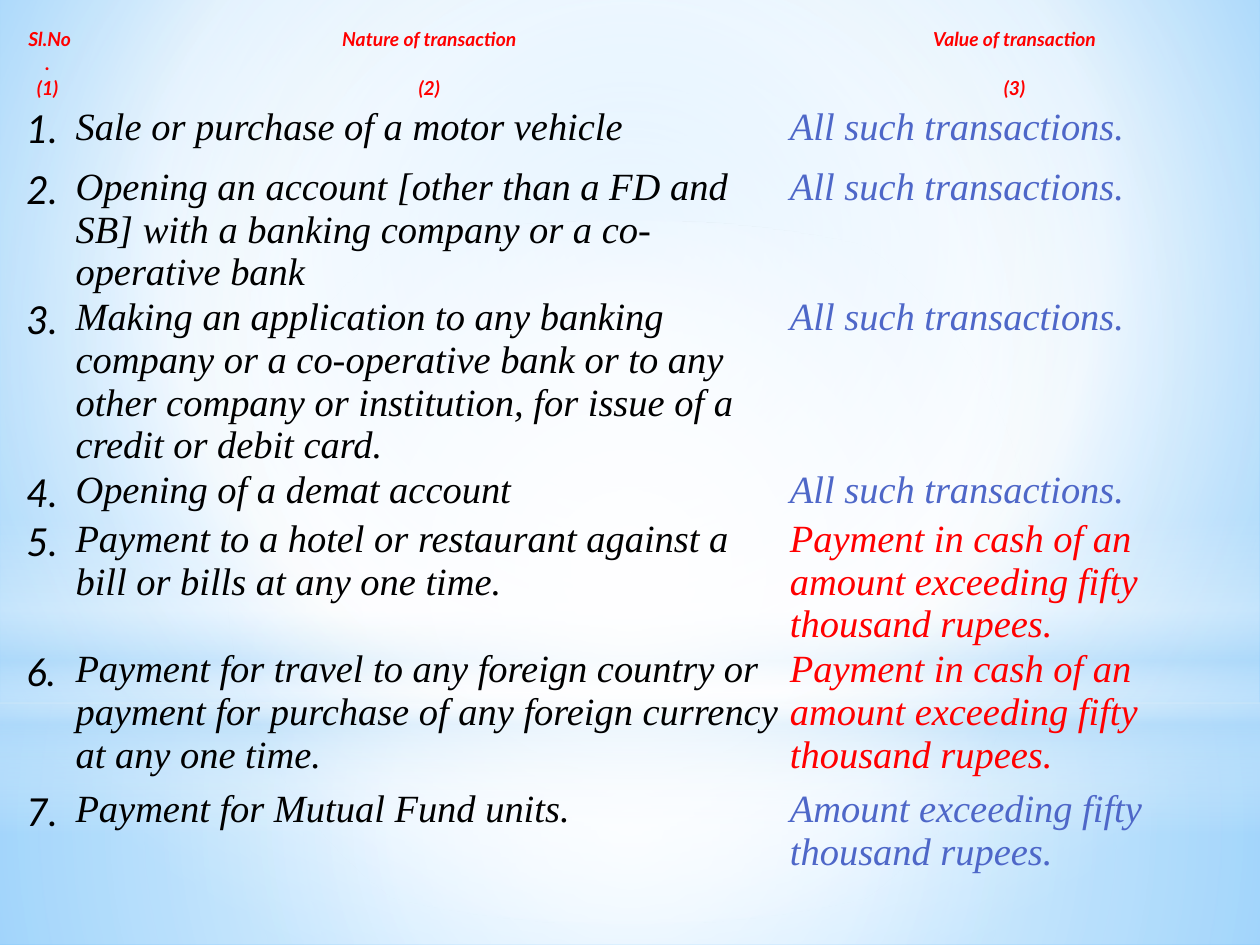
from lxml import etree
from pptx import Presentation
from pptx.dml.color import RGBColor
from pptx.enum.shapes import MSO_SHAPE
from pptx.enum.text import PP_ALIGN
from pptx.oxml.ns import qn
from pptx.util import Inches, Pt

RECTANGLE = MSO_SHAPE.RECTANGLE
OVAL = MSO_SHAPE.OVAL
LEFT = PP_ALIGN.LEFT
CENTER = PP_ALIGN.CENTER
JUSTIFY = PP_ALIGN.JUSTIFY

COLORS = {
    "white": "FFFFFF",
    "pale": "B4DCFA",
    "sky": "9ED5FF",
    "deep": "5BB9FF",
    "black": "000000",
    "red": "FF0000",
    "blue": "4E67C8",
}
LABEL_FONT = "Lato"
BODY_FONT = "Times New Roman"
PLAIN_TABLE_STYLE = "{2D5ABB26-0587-4C30-8999-92F81FD0307C}"
CENTERED = (50, 50, 50, 50)

COLUMN_WIDTHS = (0.39, 5.67, 3.62)
ROW_HEIGHTS = (0.24, 0.23, 0.48, 0.97, 1.27, 0.35, 0.82, 1.11, 0.86)
HEADINGS = (
    ("Sl.No. ", "Nature of transaction ", "Value of transaction "),
    ("(1) ", "(2) ", "(3) "),
)
ALL = ("All such transactions.", "blue")
CASH = ("Payment in cash of an amount exceeding fifty thousand rupees.", "red")
TRANSACTIONS = (
    ("Sale or purchase of a motor vehicle", ALL),
    ("Opening an account [other than a FD and SB] with a banking company "
     "or a co-operative bank", ALL),
    ("Making an application to any banking company or a co-operative bank or to "
     "any other company or institution, for issue of a credit or debit card.", ALL),
    ("Opening of a demat account", ALL),
    ("Payment to a hotel or restaurant against a bill or bills at any one time.",
     CASH),
    ("Payment for travel to any foreign country or payment for purchase of any "
     "foreign currency at any one time.", CASH),
    ("Payment for Mutual Fund units.",
     ("Amount exceeding fifty thousand rupees.", "blue")),
)


def set_gradient(fill, owner, stops, focus=None, angle=0):
    fill.gradient()
    gradient = owner.find(".//" + qn("a:gradFill"))
    for child in list(gradient):
        gradient.remove(child)
    stop_list = etree.SubElement(gradient, qn("a:gsLst"))
    for position, color, opacity in stops:
        stop = etree.SubElement(stop_list, qn("a:gs"), pos=str(position * 1000))
        tint = etree.SubElement(stop, qn("a:srgbClr"), val=COLORS[color])
        if opacity < 100:
            etree.SubElement(tint, qn("a:alpha"), val=str(opacity * 1000))
    if focus:
        radial = etree.SubElement(gradient, qn("a:path"), path="circle")
        edges = {side: str(share * 1000) for side, share in zip("ltrb", focus)}
        etree.SubElement(radial, qn("a:fillToRect"), **edges)
    else:
        etree.SubElement(gradient, qn("a:lin"), ang=str(angle * 60000), scaled="0")


def add_glow(slide, kind, top, height, stops, focus=CENTERED, angle=0):
    glow = slide.shapes.add_shape(
        kind, Inches(0), Inches(top), Inches(10), Inches(height))
    glow.shadow.inherit = False
    glow.line.fill.background()
    set_gradient(glow.fill, glow._element.spPr, stops, focus, angle)


def add_backdrop(slide):
    set_gradient(
        slide.background.fill, slide._element,
        [(0, "sky", 100), (60, "white", 100), (100, "deep", 100)],
        (20, 10, 20, 60))
    add_glow(slide, RECTANGLE, 5.58, 1.92,
             [(0, "white", 91), (37, "white", 76), (100, "pale", 79)])
    add_glow(slide, RECTANGLE, 0, 5.58,
             [(0, "white", 89), (48, "white", 62), (100, "pale", 79)])
    add_glow(slide, RECTANGLE, 4.12, 2.5,
             [(0, "white", 0), (29, "white", 30), (45, "pale", 40),
              (55, "white", 26), (65, "pale", 60), (100, "white", 0)],
             focus=None, angle=90)
    add_glow(slide, OVAL, 1.75, 5.58, [(0, "white", 100), (56, "white", 0)])


def write_cell(cell, text, font, size, color, align, bold=False):
    cell.fill.background()
    cell.margin_left = cell.margin_right = Inches(0.01)
    cell.margin_top = cell.margin_bottom = Inches(0.01)
    paragraph = cell.text_frame.paragraphs[0]
    paragraph.text = text
    paragraph.alignment = align
    style = paragraph.runs[0].font
    style.name = font
    style.size = Pt(size)
    style.bold = bold
    style.italic = True
    style.color.rgb = RGBColor.from_string(COLORS[color])


def add_transaction_table(slide):
    frame = slide.shapes.add_table(
        len(ROW_HEIGHTS), len(COLUMN_WIDTHS), Inches(0.2), Inches(0.21),
        Inches(sum(COLUMN_WIDTHS)), Inches(sum(ROW_HEIGHTS)))
    table = frame.table
    table.first_row = False
    table.horz_banding = False
    table._tbl.tblPr.find(qn("a:tableStyleId")).text = PLAIN_TABLE_STYLE
    for column, width in zip(table.columns, COLUMN_WIDTHS):
        column.width = Inches(width)
    for row, height in zip(table.rows, ROW_HEIGHTS):
        row.height = Inches(height)

    for row, headings in enumerate(HEADINGS):
        for column, heading in enumerate(headings):
            write_cell(table.cell(row, column), heading, LABEL_FONT, 11,
                       "red", CENTER, bold=True)
    for number, (nature, (value, color)) in enumerate(TRANSACTIONS, 1):
        row = number + len(HEADINGS) - 1
        write_cell(table.cell(row, 0), f"{number}. ", LABEL_FONT, 22, "black", JUSTIFY)
        write_cell(table.cell(row, 1), nature, BODY_FONT, 22, "black", LEFT)
        write_cell(table.cell(row, 2), value, BODY_FONT, 22, color, LEFT)


def main():
    presentation = Presentation()
    presentation.slide_width = Inches(10)
    presentation.slide_height = Inches(7.5)
    slide = presentation.slides.add_slide(presentation.slide_layouts[6])
    add_backdrop(slide)
    add_transaction_table(slide)
    presentation.save("out.pptx")


if __name__ == "__main__":
    main()
